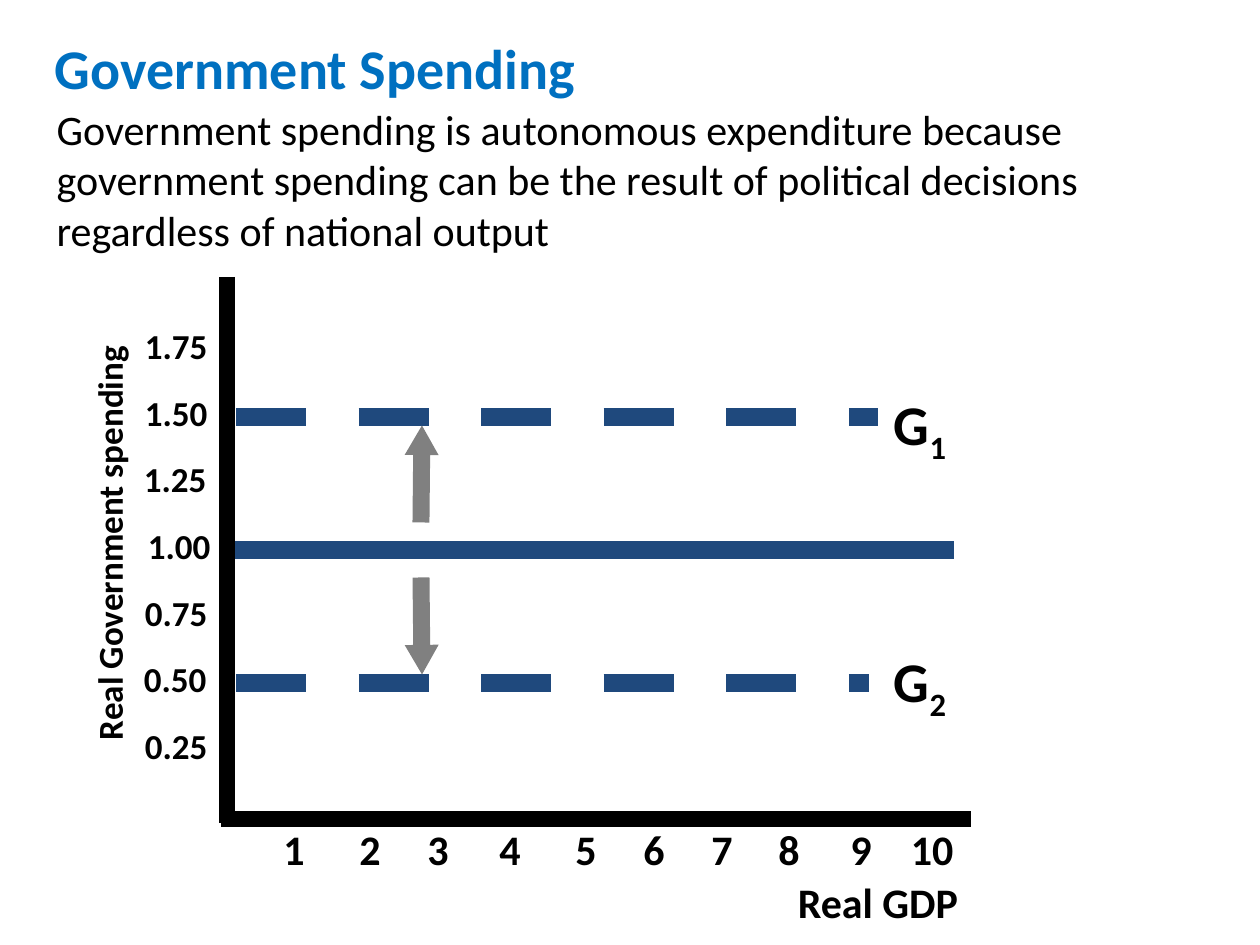
from lxml import etree
from pptx import Presentation
from pptx.dml.color import RGBColor
from pptx.enum.dml import MSO_LINE
from pptx.enum.shapes import MSO_CONNECTOR, MSO_SHAPE
from pptx.enum.text import MSO_ANCHOR, MSO_AUTO_SIZE, PP_ALIGN
from pptx.oxml.ns import qn
from pptx.util import Pt

PX = 914400 / 126
FONT = "Calibri"
BLACK = RGBColor(0, 0, 0)
BLUE = RGBColor(0x00, 0x70, 0xC0)
NAVY = RGBColor(0x1F, 0x49, 0x7D)
GRAY = RGBColor(0x80, 0x80, 0x80)
LEFT, MID, RIGHT = PP_ALIGN.LEFT, PP_ALIGN.CENTER, PP_ALIGN.RIGHT
DASH = MSO_LINE.DASH

# Content
TITLE = "Government Spending"
BODY = ("Government spending is autonomous expenditure because government "
        "spending can be the result of political decisions regardless of "
        "national output")
# Axis labels: y text with right edge, x text with centre
Y_TICKS = [("1.75", 220), ("1.50", 220), ("1.25", 219), ("1.00", 223),
           ("0.75", 220), ("0.50", 219), ("0.25", 220)]
X_TICKS = [("1", 294), ("2", 370), ("3", 438), ("4", 510), ("5", 586),
           ("6", 654), ("7", 722), ("8", 789), ("9", 861), ("10", 932)]
Y_TOP, Y_BOTTOM = 323, 723
# Lines: x1, y1, x2, y2, colour, points, dash
LEVELS = [(236, 683, 869, 683, NAVY, 10, DASH),
          (236, 417, 878, 417, NAVY, 10, DASH),
          (227, 550, 954, 550, NAVY, 10, None)]
AXES = [(221, 819, 971, 819, BLACK, 9, None),
        (227, 277, 227, 823, BLACK, 9, None)]
# Shift arrows: centre y, turn
ARROWS = [(474, 270.6), (626, 89.4)]
# Curve names: subscript, top
CURVES = [("1", 384), ("2", 641)]


def emu(*nums):
    return [round(n * PX) for n in nums]


def place(shape, *box):
    shape.left, shape.top, shape.width, shape.height = emu(*box)


def style(shape, size, align, color=BLACK, bold=True, space=0.9):
    frame = shape.text_frame
    frame.word_wrap = True
    frame.auto_size = MSO_AUTO_SIZE.NONE
    frame.vertical_anchor = MSO_ANCHOR.TOP
    for para in frame.paragraphs:
        para.alignment = align
        para.line_spacing = space
        para.space_before = Pt(0)
        for run in para.runs:
            font = run.font
            font.name, font.size, font.bold = FONT, Pt(size), bold
            font.color.rgb = color


def label(slide, text, box, size, align=MID):
    shape = slide.shapes.add_textbox(*emu(*box))
    shape.text_frame.text = text
    style(shape, size, align)
    return shape


def line(slide, x1, y1, x2, y2, color, width, dash):
    link = slide.shapes.add_connector(MSO_CONNECTOR.STRAIGHT,
                                      *emu(x1, y1, x2, y2))
    link.line.color.rgb = color
    link.line.width = Pt(width)
    if dash:
        link.line.dash_style = dash
    etree.SubElement(link._element.spPr, qn("a:effectLst"))


def main():
    deck = Presentation()
    deck.slide_width, deck.slide_height = emu(1260, 945)
    slide = deck.slides.add_slide(deck.slide_layouts[1])

    # Title and body
    title, body = slide.placeholders
    place(title, 42, 35, 727, 74)
    title.text_frame.text = TITLE
    style(title, 32, LEFT, BLUE)
    place(body, 44, 97, 1176, 204)
    body.text_frame.text = BODY
    style(body, 24, LEFT, bold=False, space=1.0)
    props = body.text_frame.paragraphs[0]._p.get_or_add_pPr()
    props.set("marL", "0")
    props.set("indent", "0")
    etree.SubElement(props, qn("a:buNone"))

    # Spending levels and axes
    for item in LEVELS + AXES:
        line(slide, *item)

    # Axis labels
    step = (Y_BOTTOM - Y_TOP) / (len(Y_TICKS) - 1)
    for i, (text, right) in enumerate(Y_TICKS):
        label(slide, text, (right - 150, Y_TOP + i * step, 150, 50), 20, RIGHT)
    for text, mid in X_TICKS:
        label(slide, text, (mid - 46, 823, 92, 59), 24)

    # Axis names
    label(slide, "Real GDP", (726, 876, 304, 59), 24)
    name = label(slide, "Real Government spending", (-163, 518, 549, 50), 20)
    name.rotation = 270

    # Shift arrows
    for mid, turn in ARROWS:
        arrow = slide.shapes.add_shape(MSO_SHAPE.RIGHT_ARROW,
                                       *emu(373, mid - 17, 97, 34))
        arrow.adjustments[1] = 0.87
        arrow.rotation = turn
        arrow.fill.solid()
        arrow.fill.fore_color.rgb = GRAY
        arrow.line.fill.background()
        arrow.shadow.inherit = False

    # Curve names with subscripts
    for sub, top in CURVES:
        curve = label(slide, "G", (869, top, 102, 74), 32)
        run = curve.text_frame.paragraphs[0].add_run()
        run.text = sub
        style(curve, 32, MID)
        run.font._element.set("baseline", "-25000")

    deck.save("out.pptx")


if __name__ == "__main__":
    main()
